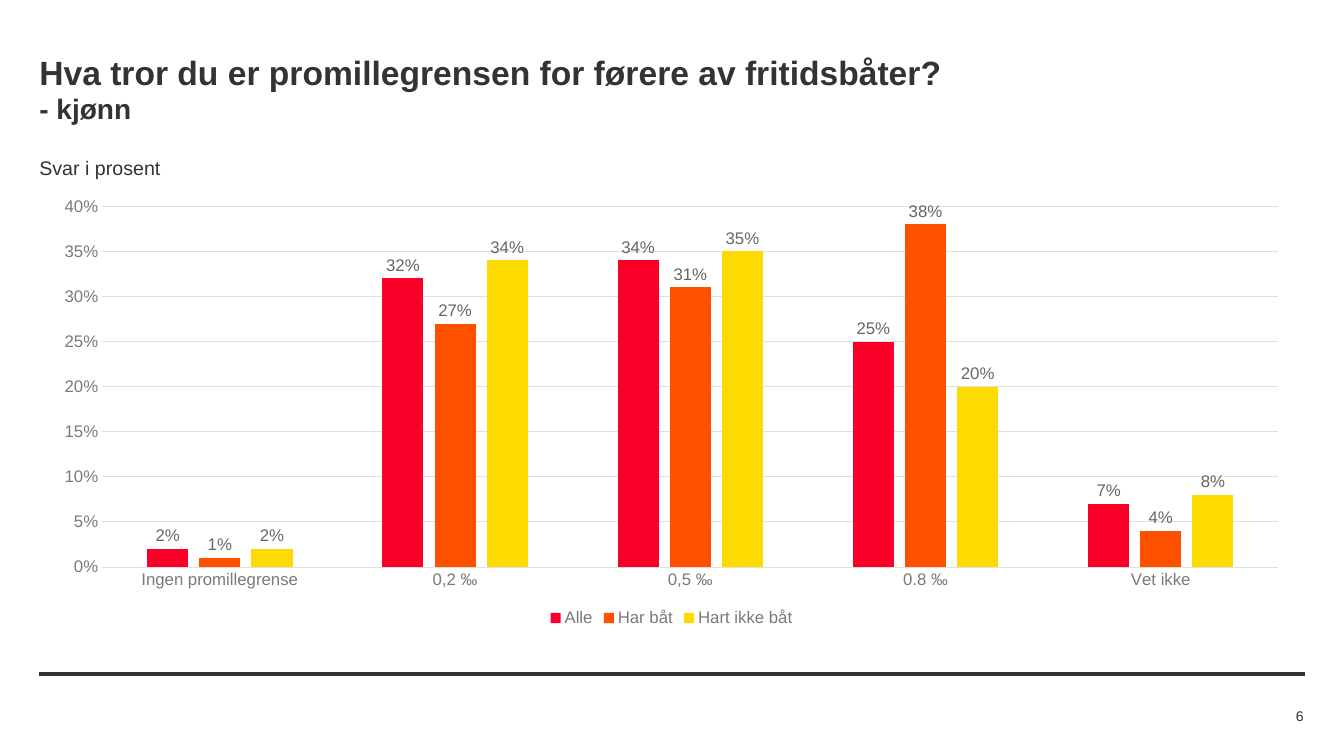
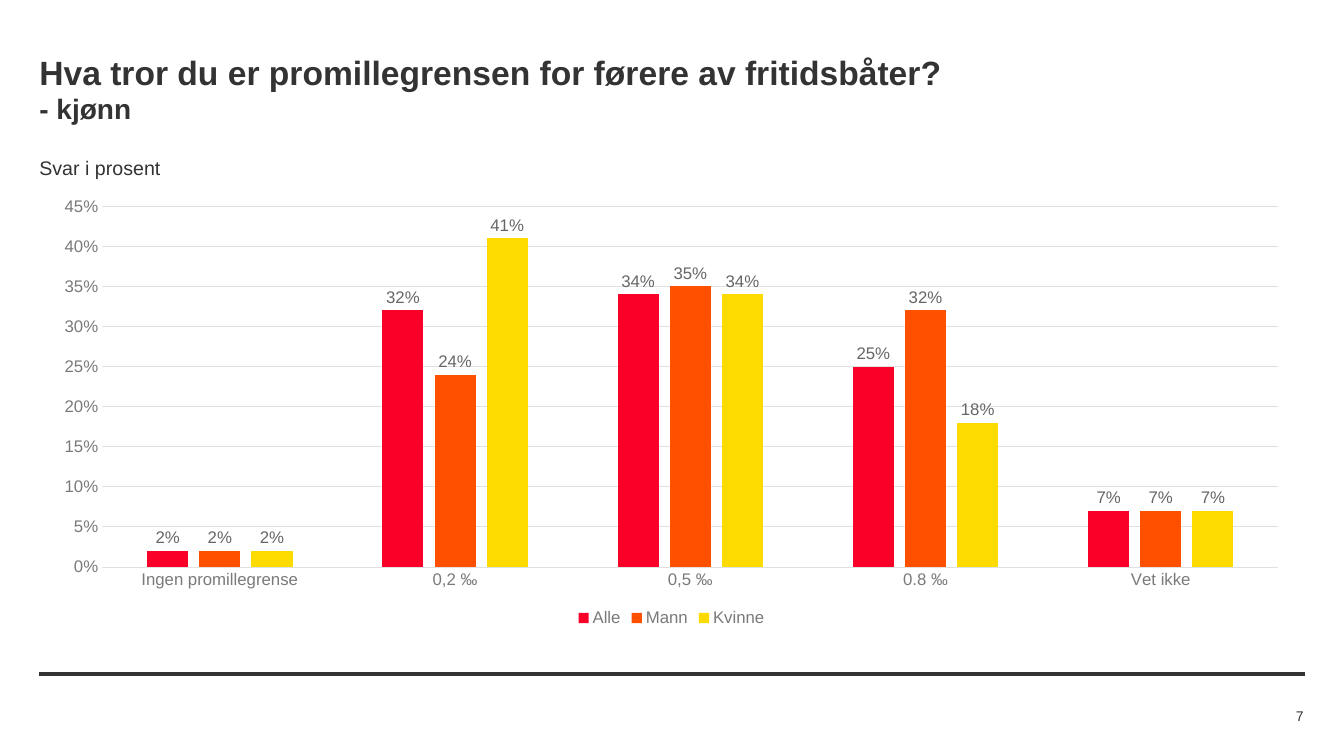
from lxml.etree import SubElement
from pptx import Presentation
from pptx.chart.data import CategoryChartData
from pptx.dml.color import RGBColor
from pptx.enum.chart import XL_CHART_TYPE, XL_LABEL_POSITION, XL_LEGEND_POSITION, XL_TICK_MARK
from pptx.enum.shapes import MSO_CONNECTOR
from pptx.enum.text import MSO_ANCHOR, PP_ALIGN
from pptx.oxml.ns import qn
from pptx.util import Inches, Pt

TITLE = "Hva tror du er promillegrensen for førere av fritidsbåter?"
SUBTITLE = "- kjønn"
UNIT_NOTE = "Svar i prosent"
CATEGORIES = ["Ingen promillegrense", "0,2 ‰", "0,5 ‰", "0.8 ‰", "Vet ikke"]
EVERYONE = ("Alle", [0.02, 0.32, 0.34, 0.25, 0.07])
SLIDES = [
    {
        "number": 6,
        "maximum": 0.40,
        "series": [
            EVERYONE,
            ("Har båt", [0.01, 0.27, 0.31, 0.38, 0.04]),
            ("Hart ikke båt", [0.02, 0.34, 0.35, 0.20, 0.08]),
        ],
    },
    {
        "number": 7,
        "maximum": 0.45,
        "series": [
            EVERYONE,
            ("Mann", [0.02, 0.24, 0.35, 0.32, 0.07]),
            ("Kvinne", [0.02, 0.41, 0.34, 0.18, 0.07]),
        ],
    },
]

FONT = "Arial"
DARK = RGBColor(0x33, 0x33, 0x33)
AXIS_GREY = RGBColor(0x7A, 0x7A, 0x7A)
LABEL_GREY = RGBColor(0x66, 0x66, 0x66)
GRID_GREY = RGBColor(0xE0, 0xE0, 0xE0)
SERIES_COLORS = [
    RGBColor(0xFA, 0x00, 0x28),
    RGBColor(0xFF, 0x50, 0x00),
    RGBColor(0xFE, 0xDB, 0x00),
]
PERCENT = "0%"
LEFT, WIDTH = 0.39, 12.54
RIGHT = LEFT + WIDTH


def style_font(font, size, color=DARK, bold=False):
    font.name = FONT
    font.size = Pt(size)
    font.bold = bold
    font.color.rgb = color


def add_text(slide, lines, left, top, width, height, bold=False,
             align=PP_ALIGN.LEFT, anchor=MSO_ANCHOR.TOP, inset_top=0, wrap=True):
    shape = slide.shapes.add_textbox(Inches(left), Inches(top), Inches(width), Inches(height))
    frame = shape.text_frame
    frame.word_wrap = wrap
    frame.vertical_anchor = anchor
    frame.margin_left = frame.margin_right = frame.margin_bottom = 0
    frame.margin_top = Inches(inset_top)
    paragraph = frame.paragraphs[0]
    paragraph.alignment = align
    for index, (text, size) in enumerate(lines):
        if index:
            paragraph.add_line_break()
        run = paragraph.add_run()
        run.text = text
        style_font(run.font, size, bold=bold)


def add_footer_rule(slide):
    rule = slide.shapes.add_connector(
        MSO_CONNECTOR.STRAIGHT, Inches(LEFT), Inches(6.69), Inches(12.94), Inches(6.69))
    rule.line.color.rgb = DARK
    rule.line.width = Pt(3)
    SubElement(rule._element.spPr, qn("a:effectLst"))


def style_axis(axis):
    axis.major_tick_mark = axis.minor_tick_mark = XL_TICK_MARK.NONE
    style_font(axis.tick_labels.font, 12, AXIS_GREY)


def style_line(line):
    line.color.rgb = GRID_GREY
    line.width = Pt(0.75)


def add_column_chart(slide, series_data, maximum):
    data = CategoryChartData(number_format=PERCENT)
    data.categories = CATEGORIES
    for name, values in series_data:
        data.add_series(name, values)
    chart = slide.shapes.add_chart(
        XL_CHART_TYPE.COLUMN_CLUSTERED, Inches(LEFT), Inches(1.87),
        Inches(WIDTH), Inches(4.39), data).chart
    style_font(chart.font, 10)
    chart.has_title = False

    chart.has_legend = True
    chart.legend.position = XL_LEGEND_POSITION.BOTTOM
    chart.legend.include_in_layout = False
    style_font(chart.legend.font, 12, AXIS_GREY)

    style_axis(chart.category_axis)
    style_line(chart.category_axis.format.line)

    value_axis = chart.value_axis
    style_axis(value_axis)
    value_axis.minimum_scale = 0
    value_axis.maximum_scale = maximum
    value_axis.major_unit = 0.05
    value_axis.format.line.fill.background()
    value_axis.tick_labels.number_format = PERCENT
    value_axis.tick_labels.number_format_is_linked = False
    style_line(value_axis.major_gridlines.format.line)

    plot = chart.plots[0]
    plot.gap_width = 219
    plot.overlap = -27
    plot.vary_by_categories = False
    for series, color in zip(plot.series, SERIES_COLORS):
        series.format.fill.solid()
        series.format.fill.fore_color.rgb = color
        series.invert_if_negative = False
        labels = series.data_labels
        labels.show_value = True
        labels.position = XL_LABEL_POSITION.OUTSIDE_END
        labels.number_format = PERCENT
        labels.number_format_is_linked = False
        style_font(labels.font, 12, LABEL_GREY)


def build_slide(presentation, content):
    slide = presentation.slides.add_slide(presentation.slide_layouts[6])
    add_footer_rule(slide)
    add_column_chart(slide, content["series"], content["maximum"])
    add_text(slide, [(TITLE, 24), (SUBTITLE, 20)], LEFT, 0.47, WIDTH, 0.44,
             bold=True, inset_top=0.04)
    add_text(slide, [(UNIT_NOTE, 14)], LEFT, 1.55, 1.22, 0.24, wrap=False)
    add_text(slide, [(str(content["number"]), 10)], RIGHT - 1.06, 6.99, 1.06, 0.22,
             align=PP_ALIGN.RIGHT, anchor=MSO_ANCHOR.MIDDLE)


def main():
    presentation = Presentation()
    presentation.slide_width = Inches(13.33)
    presentation.slide_height = Inches(7.5)
    for content in SLIDES:
        build_slide(presentation, content)
    presentation.save("out.pptx")


if __name__ == "__main__":
    main()
